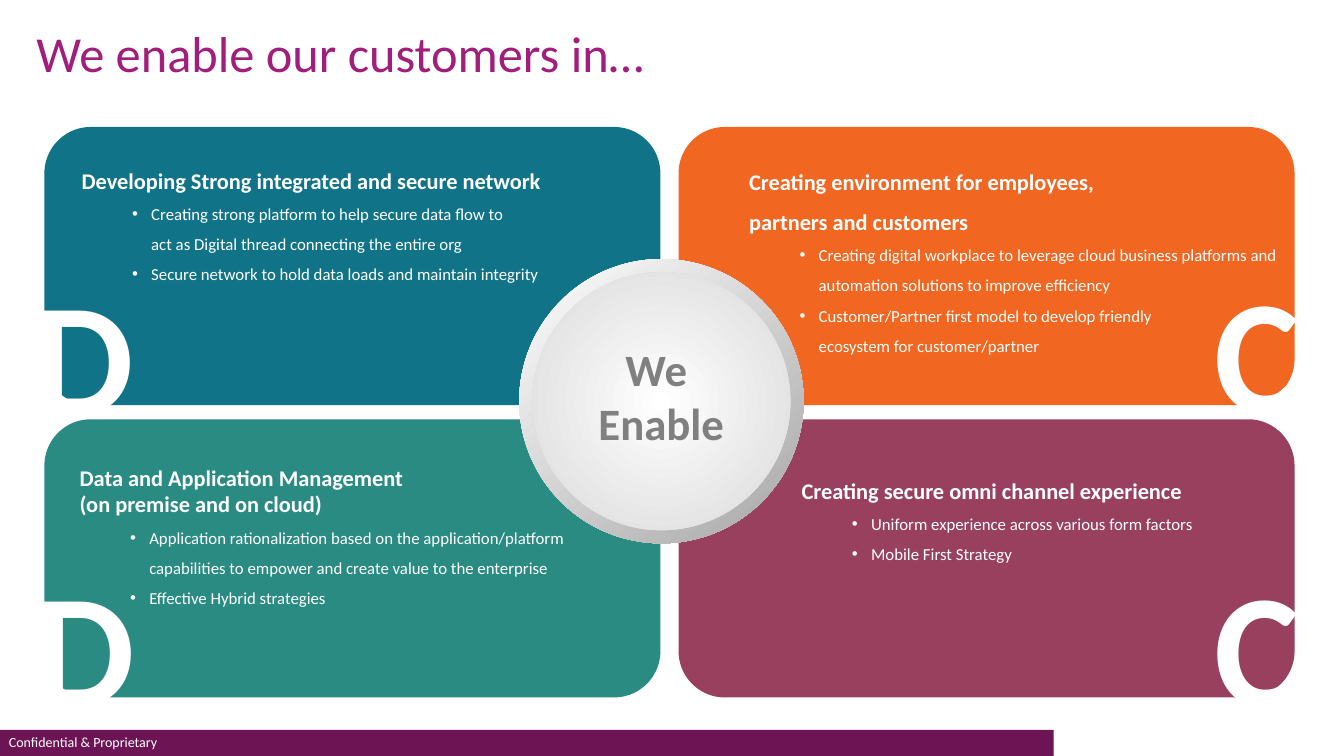
from lxml import etree
from pptx import Presentation
from pptx.dml.color import RGBColor
from pptx.enum.shapes import MSO_SHAPE as Shape
from pptx.enum.text import MSO_ANCHOR as Anchor, MSO_AUTO_SIZE as AutoSize, PP_ALIGN as Align
from pptx.oxml.ns import qn
from pptx.util import Inches, Pt

FONT = "Calibri"
WHITE = "FFFFFF"
CARD_WIDTH, CARD_HEIGHT = 6.11, 2.76
COLUMNS = (0.44, 6.73)
ROWS = (1.26, 4.16)

# Column, row, colour, text box offset and size, heading spacing, letter, letter offset and width
CARDS = [
    dict(column=0, row=0, color="117388", text_box=(0.27, 0.21, 5.81, 1.87), spacing=1.5,
         letter="D", letter_box=(-0.23, 1.22, 1.24, 2.04),
         heading="Developing Strong integrated and secure network",
         bullets=["Creating strong platform to help secure data flow to \v"
                  "act as Digital thread connecting the entire org",
                  "Secure network to hold data loads and maintain integrity"]),
    dict(column=1, row=0, color="F16621", text_box=(0.6, 0.22, 5.88, 2.12), spacing=1.5,
         letter="C", letter_box=(5.2, 1.19, 1.08, 2.04),
         heading="Creating environment for employees, \vpartners and customers",
         bullets=["Creating digital workplace to leverage cloud business platforms and "
                  "automation solutions to improve efficiency",
                  "Customer/Partner first model to develop friendly \v"
                  "ecosystem for customer/partner"]),
    dict(column=0, row=1, color="2A8B82", text_box=(0.25, 0.39, 5.51, 1.55), spacing=1.0,
         letter="D", letter_box=(-0.22, 1.2, 1.24, 2.04),
         heading="Data and Application Management \v(on premise and on cloud)",
         bullets=["Application rationalization based on the application/platform "
                  "capabilities to empower and create value to the enterprise",
                  "Effective Hybrid strategies"]),
    dict(column=1, row=1, color="99405E", text_box=(1.12, 0.52, 4.57, 1.51), spacing=1.0,
         letter="C", letter_box=(5.2, 1.2, 1.08, 2.04),
         heading="Creating secure omni channel experience",
         bullets=["Uniform experience across various form factors",
                  "Mobile First Strategy"]),
]


def rgb(color):
    return RGBColor.from_string(color)


def place(shape, left, top, width, height):
    shape.left, shape.top = Inches(left), Inches(top)
    shape.width, shape.height = Inches(width), Inches(height)


def format_runs(paragraph, size, color, bold=False):
    for run in paragraph.runs:
        run.font.name, run.font.size, run.font.bold = FONT, Pt(size), bold
        run.font.color.rgb = rgb(color)


def add_block(slide, kind, box, color=None):
    block = slide.shapes.add_shape(kind, *map(Inches, box))
    block.shadow.inherit = False
    block.line.fill.background()
    if color:
        block.fill.solid()
        block.fill.fore_color.rgb = rgb(color)
    return block


def add_label(slide, box, text, size, color, bold=False, wrap=False, align=Align.CENTER):
    label = slide.shapes.add_textbox(*map(Inches, box))
    label.text_frame.word_wrap = wrap
    paragraph = label.text_frame.paragraphs[0]
    paragraph.text, paragraph.alignment = text, align
    format_runs(paragraph, size, color, bold)
    return paragraph


def set_gradient(shape, end_color, angle=0):
    shape.fill.gradient()
    shape.fill.gradient_angle = angle
    for stop, position, color in zip(shape.fill.gradient_stops, (0, 1), (WHITE, end_color)):
        stop.position, stop.color.rgb = position, rgb(color)


def set_radial(shape):
    gradient = shape.element.spPr.find(qn("a:gradFill"))
    gradient.remove(gradient.find(qn("a:lin")))
    radial = etree.SubElement(gradient, qn("a:path"), path="circle")
    etree.SubElement(radial, qn("a:fillToRect"), l="50000", t="50000", r="50000", b="50000")


def set_indent(paragraph, margin, indent, bullet=None):
    properties = paragraph._p.get_or_add_pPr()
    properties.set("marL", str(Inches(margin)))
    properties.set("indent", str(Inches(indent)))
    if bullet:
        etree.SubElement(properties, qn("a:buFont"), typeface="Arial")
        etree.SubElement(properties, qn("a:buChar"), char=bullet)
    else:
        etree.SubElement(properties, qn("a:buNone"))


def prepare_frame(placeholder):
    frame = placeholder.text_frame
    frame.word_wrap, frame.auto_size = True, AutoSize.NONE
    frame.vertical_anchor = Anchor.TOP
    return frame


def add_title(slide, box):
    place(slide.shapes.title, *box)
    frame = prepare_frame(slide.shapes.title)
    frame.text = "We enable our customers in…"
    frame.paragraphs[0].alignment = Align.LEFT
    format_runs(frame.paragraphs[0], 36, "A21E7C")


def add_footer(slide, left, top):
    add_block(slide, Shape.RECTANGLE, (left, top, 10.45, 0.26), "6D1554")
    add_label(slide, (left - 0.01, top - 0.01, 3.34, 0.27), "Confidential & Proprietary",
              10, WHITE, wrap=True, align=Align.LEFT)


def add_card(slide, body, card):
    left, top = COLUMNS[card["column"]], ROWS[card["row"]]
    add_block(slide, Shape.ROUNDED_RECTANGLE, (left, top, CARD_WIDTH, CARD_HEIGHT), card["color"])

    # Heading and bullets, raised above the card
    slide.shapes._spTree.append(body.element)
    dx, dy, width, height = card["text_box"]
    place(body, left + dx, top + dy, width, height)
    frame = prepare_frame(body)
    for number, text in enumerate([card["heading"], *card["bullets"]]):
        paragraph = frame.add_paragraph() if number else frame.paragraphs[0]
        paragraph.text = text
        paragraph.space_before = Pt(0)
        if number:
            paragraph.level, paragraph.line_spacing = 1, 1.5
            set_indent(paragraph, 0.69, -0.19, "•")
            format_runs(paragraph, 12, WHITE)
        else:
            paragraph.line_spacing = card["spacing"]
            set_indent(paragraph, 0, 0)
            format_runs(paragraph, 16, WHITE, bold=True)


def add_letter(slide, card):
    dx, dy, width, height = card["letter_box"]
    box = (COLUMNS[card["column"]] + dx, ROWS[card["row"]] + dy, width, height)
    paragraph = add_label(slide, box, card["letter"], 115, WHITE, bold=True)
    paragraph.runs[0]._r.get_or_add_rPr().set("spc", "150")


def add_hub(slide, left, top, size):
    rim = add_block(slide, Shape.OVAL, (left, top, size, size))
    set_gradient(rim, "A6A6A6", angle=310)
    face_size = size - 0.26
    face = add_block(slide, Shape.OVAL, (left + 0.13, top + 0.13, face_size, face_size))
    set_gradient(face, "D9D9D9")
    set_radial(face)
    add_label(slide, (left + 0.68, top + 0.77, 1.46, 1.18), "We \vEnable", 32, "808080", bold=True)


def main():
    presentation = Presentation()
    presentation.slide_width, presentation.slide_height = Inches(13.33), Inches(7.5)
    # The comparison layout holds a title and four body placeholders
    slide = presentation.slides.add_slide(presentation.slide_layouts[4])
    bodies = [item for item in slide.placeholders if item.placeholder_format.idx > 0]

    add_footer(slide, 0, 7.24)
    add_title(slide, (0.26, 0.17, 9.14, 0.71))
    for body, card in zip(bodies, CARDS):
        add_card(slide, body, card)
    add_hub(slide, 5.15, 2.57, 2.82)
    for card in CARDS:
        add_letter(slide, card)
    presentation.save("out.pptx")


if __name__ == "__main__":
    main()
